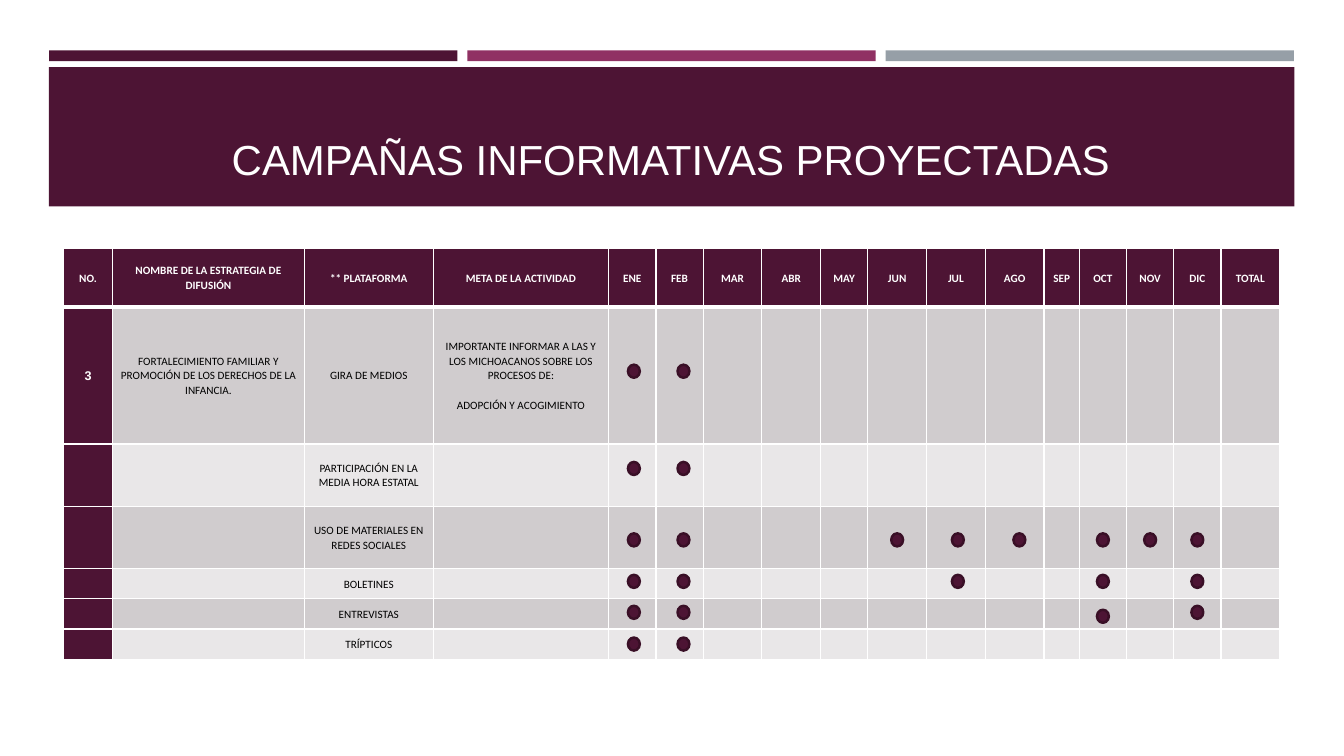
import pptx
import pptx.util
import pptx.dml.color
import pptx.enum.shapes
import pptx.enum.text
import pptx.oxml
import pptx.oxml.ns
import lxml.etree

Cm = pptx.util.Cm
Pt = pptx.util.Pt

THEME = {
    "plum": "4D1434", "magenta": "903163", "gray": "969FA7", "outline": "390F26",
    "white": "FFFFFF", "black": "000000", "bands": ("D0CCCE", "E9E7E8"),
    "title_font": "Arial", "table_font": "Calibri",
    "title_size": 30, "number_size": 9, "table_size": 8,
}

TITLE = "CAMPAÑAS INFORMATIVAS PROYECTADAS"
COLUMNS = [
    ("NO.", 1.24), ("NOMBRE DE LA ESTRATEGIA DE DIFUSIÓN", 4.83),
    ("** PLATAFORMA", 3.25), ("META DE LA ACTIVIDAD", 4.42),
    ("ENE", 1.19), ("FEB", 1.19), ("MAR", 1.48), ("ABR", 1.48), ("MAY", 1.19),
    ("JUN", 1.48), ("JUL", 1.48), ("AGO", 1.48), ("SEP", 0.89), ("OCT", 1.19),
    ("NOV", 1.19), ("DIC", 1.19), ("TOTAL", 1.48),
]
STRATEGY = "FORTALECIMIENTO FAMILIAR Y PROMOCIÓN DE LOS DERECHOS DE LA INFANCIA."
GOAL = [
    "IMPORTANTE INFORMAR A LAS Y LOS MICHOACANOS SOBRE LOS PROCESOS DE:",
    "ADOPCIÓN Y ACOGIMIENTO",
]
HEADER_HEIGHT = 1.47
ROWS = [
    (["3", STRATEGY, "GIRA DE MEDIOS", GOAL], 3.45, "ENE FEB", -0.11),
    (["", "", "PARTICIPACIÓN EN LA MEDIA HORA ESTATAL"], 1.57, "ENE FEB", -0.17),
    (["", "", "USO DE MATERIALES EN REDES SOCIALES"], 1.57,
     "ENE FEB JUN JUL AGO OCT NOV DIC", 0.06),
    (["", "", "BOLETINES"], 0.76, "ENE FEB JUL OCT DIC", -0.06),
    (["", "", "ENTREVISTAS"], 0.76, "ENE FEB OCT DIC", -0.04),
    (["", "", "TRÍPTICOS"], 0.76, "ENE FEB", 0),
]
MONTH_SHIFT = {"ENE": 0.04, "FEB": 0.1, "JUL": 0.05, "AGO": 0.12}
DOT_SHIFT = {("ENTREVISTAS", "OCT"): 0.1}
STRIPES = ["plum", "magenta", "gray"]
TABLE_LEFT, TABLE_TOP = 1.6, 6.27
DOT_WIDTH, DOT_HEIGHT = 0.3, 0.33


def color(value):
    return pptx.dml.color.RGBColor.from_string(value)


def write(frame, text, *, font=THEME["table_font"], size=THEME["table_size"],
          ink=THEME["black"], bold=False, spacing=1.07, gap=0):
    lines = text if isinstance(text, list) else [text]
    for index, line in enumerate(lines):
        para = frame.paragraphs[0] if index == 0 else frame.add_paragraph()
        para.alignment = pptx.enum.text.PP_ALIGN.CENTER
        para.line_spacing = spacing
        if index:
            para.space_before = Pt(gap)
        if line:
            span = para.add_run()
            span.text = line
            span.font.name = font
            span.font.size = Pt(size)
            span.font.bold = bold
            span.font.color.rgb = color(ink)
        else:
            ending = lxml.etree.SubElement(para._p, pptx.oxml.ns.qn("a:endParaRPr"))
            ending.set("sz", str(size * 100))


def draw(page, kind, left, top, width, height, fill, outline=None):
    shape = page.shapes.add_shape(kind, Cm(left), Cm(top), Cm(width), Cm(height))
    shape.shadow.inherit = False
    shape.fill.solid()
    shape.fill.fore_color.rgb = color(fill)
    if outline:
        shape.line.color.rgb = color(outline)
        shape.line.width = Pt(1.75)
    else:
        shape.line.fill.background()


def border(cell, **widths):
    properties = cell._tc.get_or_add_tcPr()
    for side in "LRTB":
        width = Pt(widths.get(side, 1))
        properties.append(pptx.oxml.parse_xml(
            f'<a:ln{side} {pptx.oxml.ns.nsdecls("a")} w="{width}"><a:solidFill>'
            f'<a:srgbClr val="{THEME["white"]}"/></a:solidFill></a:ln{side}>'))


def fill_cell(cell, text, row, column):
    dark = row == 0 or column == 0
    border(cell, B=3 if row == 0 else 1, T=3 if row == 1 else 1)
    cell.fill.solid()
    cell.fill.fore_color.rgb = color(
        THEME["plum"] if dark else THEME["bands"][(row - 1) % 2])
    cell.margin_left = cell.margin_right = Cm(0.12)
    cell.margin_top = cell.margin_bottom = 0
    cell.vertical_anchor = pptx.enum.text.MSO_ANCHOR.MIDDLE
    numbered = row > 0 and column == 0
    write(cell.text_frame, text, bold=dark,
          ink=THEME["white"] if dark else THEME["black"],
          font=THEME["title_font"] if numbered else THEME["table_font"],
          size=THEME["number_size"] if numbered else THEME["table_size"], gap=10.5)


def add_heading(page):
    rectangle = pptx.enum.shapes.MSO_SHAPE.RECTANGLE
    for index, name in enumerate(STRIPES):
        draw(page, rectangle, 1.24 + index * 10.54, 1.27, 10.29, 0.27, THEME[name])
    draw(page, rectangle, 1.23, 1.69, 31.39, 3.51, THEME["plum"])
    box = page.shapes.add_textbox(Cm(1.6), Cm(2.03), Cm(30.63), Cm(2.74))
    box.text_frame.word_wrap = True
    box.text_frame.vertical_anchor = pptx.enum.text.MSO_ANCHOR.BOTTOM
    write(box.text_frame, TITLE, font=THEME["title_font"],
          size=THEME["title_size"], ink=THEME["white"], spacing=1.0)


def add_schedule(page):
    names = [name for name, width in COLUMNS]
    widths = [width for name, width in COLUMNS]
    heights = [HEADER_HEIGHT] + [row[1] for row in ROWS]
    contents = [names] + [row[0] for row in ROWS]
    table = page.shapes.add_table(
        len(heights), len(widths), Cm(TABLE_LEFT), Cm(TABLE_TOP),
        Cm(sum(widths)), Cm(sum(heights))).table
    table.horz_banding = False
    for column, width in enumerate(widths):
        table.columns[column].width = Cm(width)
    for row, height in enumerate(heights):
        table.rows[row].height = Cm(height)
        for column in range(len(widths)):
            text = contents[row][column] if column < len(contents[row]) else ""
            fill_cell(table.cell(row, column), text, row, column)

    top = TABLE_TOP + HEADER_HEIGHT
    for texts, height, months, row_shift in ROWS:
        for month in months.split():
            column = names.index(month)
            center_x = TABLE_LEFT + sum(widths[:column]) + widths[column] / 2
            center_x += MONTH_SHIFT.get(month, 0)
            center_y = top + height / 2 + row_shift
            center_y += DOT_SHIFT.get((texts[2], month), 0)
            draw(page, pptx.enum.shapes.MSO_SHAPE.OVAL,
                 center_x - DOT_WIDTH / 2, center_y - DOT_HEIGHT / 2,
                 DOT_WIDTH, DOT_HEIGHT, THEME["plum"], THEME["outline"])
        top += height


def main():
    deck = pptx.Presentation()
    deck.slide_width, deck.slide_height = Cm(33.87), Cm(19.05)
    page = deck.slides.add_slide(deck.slide_layouts[6])
    add_heading(page)
    add_schedule(page)
    deck.save("out.pptx")


if __name__ == "__main__":
    main()
